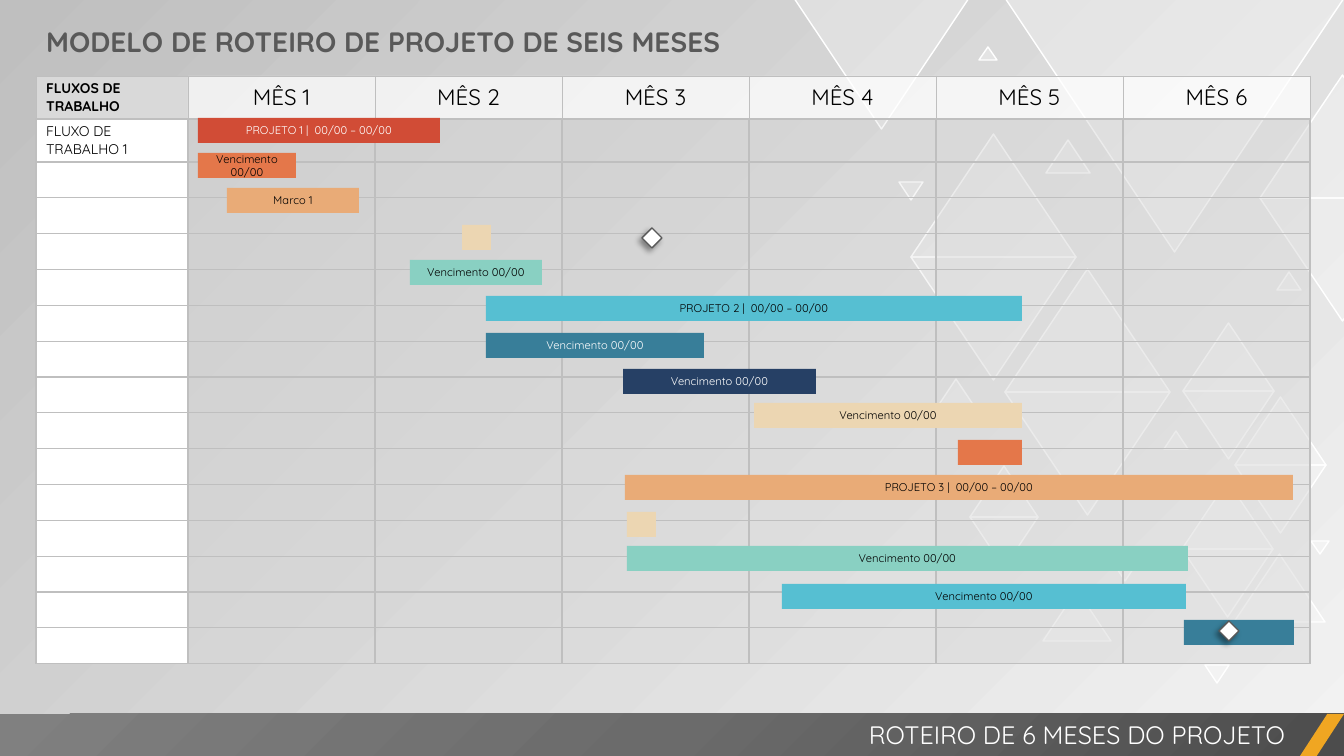
import dataclasses

import pptx
import pptx.dml.color
import pptx.enum.shapes
import pptx.enum.text
import pptx.oxml
import pptx.oxml.ns
import pptx.util

SHAPE = pptx.enum.shapes.MSO_SHAPE
ALIGN = pptx.enum.text.PP_ALIGN
ANCHOR = pptx.enum.text.MSO_ANCHOR
PAGE_WIDTH, PAGE_HEIGHT = 1344, 756
EMU_PER_PX = 12192000 / PAGE_WIDTH
NAMESPACE = 'xmlns:a="http://schemas.openxmlformats.org/drawingml/2006/main"'


@dataclasses.dataclass(frozen=True)
class Theme:
    font: str = "Quicksand"
    white: str = "FFFFFF"
    black: str = "000000"
    heading: str = "595959"
    grid: str = "BFBFBF"
    shade: str = "D9D9D9"
    pale: str = "F2F2F2"
    footer: tuple = ("4C4C4C", "6B6B6B", "808080")
    accent: str = "F0A622"
    red: str = "D14C36"
    orange: str = "E4774A"
    peach: str = "E9AB77"
    sand: str = "ECD6B2"
    mint: str = "89D0C2"
    sky: str = "56BFD2"
    teal: str = "387E99"
    navy: str = "264065"
    title_size: int = 20
    footer_size: int = 18
    month_size: int = 16
    stream_size: int = 10
    bar_size: int = 8


THEME = Theme()
DUE = "Vencimento 00/00"
DIAMONDS = [(911, 134, 165), (1005, 269, 165), (1182, 481, 91), (1183, 323, 91),
            (1235, 397, 91), (970, 466, 68), (1260, 75, 165)]
UPWARD = [(1234, 554, 91), (1043, 590, 68), (934, 379, 44), (1164, 431, 24),
          (1277, 272, 24), (979, 47, 18), (1046, 140, 44)]
DOWNWARD = [(1005, -2, 339), (1103, 548, 44), (1205, 665, 24), (899, 182, 24),
            (1311, 541, 18), (794, -2, 175)]
BARS = [
    (162, 42, 242, THEME.red, "PROJETO 1 |  00/00 – 00/00", THEME.white),
    (162, 77, 98, THEME.orange, DUE, THEME.black),
    (191, 112, 132, THEME.peach, "Marco 1", THEME.black),
    (426, 149, 29, THEME.sand, "", THEME.black),
    (374, 184, 132, THEME.mint, DUE, THEME.black),
    (450, 220, 536, THEME.sky, "PROJETO 2 |  00/00 – 00/00", THEME.black),
    (450, 257, 218, THEME.teal, DUE, THEME.white),
    (587, 293, 193, THEME.navy, DUE, THEME.white),
    (718, 327, 268, THEME.sand, DUE, THEME.black),
    (922, 364, 64, THEME.orange, "", THEME.black),
    (589, 399, 668, THEME.peach, "PROJETO 3 |  00/00 – 00/00", THEME.black),
    (591, 436, 29, THEME.sand, "", THEME.black),
    (591, 470, 561, THEME.mint, DUE, THEME.black),
    (746, 508, 404, THEME.sky, DUE, THEME.black),
    (1148, 544, 110, THEME.teal, "", THEME.black),
]
MILESTONES = [(606, 152), (1183, 545)]


def px(length):
    return round(length * EMU_PER_PX)


def rgb(colour):
    return pptx.dml.color.RGBColor.from_string(colour)


def xml(text):
    return pptx.oxml.parse_xml(text)


def paint(fill, element, colour, opacity=100):
    fill.solid()
    fill.fore_color.rgb = rgb(colour)
    if opacity < 100:
        swatch = element.find(pptx.oxml.ns.qn("a:solidFill"))[0]
        swatch.append(xml(f'<a:alpha {NAMESPACE} val="{opacity * 1000}"/>'))


def paint_gradient(fill, element, colours, direction, first_opacity=100):
    fill.solid()
    stops = ""
    for index, colour in enumerate(colours):
        position = index * 100000 // (len(colours) - 1)
        opacity = 100 if index else first_opacity
        stops += (f'<a:gs pos="{position}"><a:srgbClr val="{colour}">'
                  f'<a:alpha val="{opacity * 1000}"/></a:srgbClr></a:gs>')
    solid = element.find(pptx.oxml.ns.qn("a:solidFill"))
    element.replace(solid, xml(
        f'<a:gradFill {NAMESPACE} rotWithShape="1"><a:gsLst>{stops}</a:gsLst>'
        f'{direction}</a:gradFill>'))


def write(frame, text, size, colour, align=ALIGN.LEFT, bold=False):
    frame.text = text
    para = frame.paragraphs[0]
    para.alignment = align
    para.font.size = pptx.util.Pt(size)
    for span in para.runs:
        span.font.name = THEME.font
        span.font.size = pptx.util.Pt(size)
        span.font.bold = bold
        span.font.color.rgb = rgb(colour)


def add_figure(page, kind, box, colour, opacity=100, line=None):
    figure = page.shapes.add_shape(kind, *map(px, box))
    figure.shadow.inherit = False
    paint(figure.fill, figure.element.spPr, colour, opacity)
    if line:
        figure.line.color.rgb = rgb(line)
        figure.line.width = pptx.util.Pt(1)
    else:
        figure.line.fill.background()
    return figure


def draw_backdrop(page):
    fill = page.background.fill
    fill.solid()
    holder = page.element.find(".//" + pptx.oxml.ns.qn("p:bgPr"))
    paint_gradient(fill, holder, (THEME.pale, THEME.grid),
                   '<a:lin ang="13500000" scaled="0"/>', first_opacity=40)
    triangles = [(*spot, 0) for spot in DIAMONDS + UPWARD]
    triangles += [(*spot, 180) for spot in DOWNWARD]
    triangles += [(left, top + width * 3 // 4, width, 180) for left, top, width in DIAMONDS]
    for left, top, width, turn in triangles:
        triangle = add_figure(page, SHAPE.ISOSCELES_TRIANGLE,
                              (left, top, width, width * 3 // 4), THEME.white, 30, THEME.white)
        triangle.rotation = turn


def draw_title(page, box):
    title = page.shapes.title
    title.left, title.top, title.width, title.height = map(px, box)
    frame = title.text_frame
    frame.word_wrap = True
    frame.auto_size = pptx.enum.text.MSO_AUTO_SIZE.NONE
    frame.vertical_anchor = ANCHOR.TOP
    write(frame, "MODELO DE ROTEIRO DE PROJETO DE SEIS MESES",
          THEME.title_size, THEME.heading, bold=True)


def draw_footer(page, box):
    left, top, width, height = box
    band = add_figure(page, SHAPE.RECTANGLE, box, THEME.footer[0])
    paint_gradient(band.fill, band.element.spPr, THEME.footer,
                   '<a:path path="circle"><a:fillToRect l="100000" t="100000"/></a:path>')
    stripe = add_figure(page, SHAPE.PARALLELOGRAM,
                        (left + width - 44, top, 44, height), THEME.accent)
    stripe.adjustments[0] = 0.65
    label = page.shapes.add_textbox(*map(px, (left + width - 815, top, 766, 40)))
    label.text_frame.word_wrap = True
    write(label.text_frame, "ROTEIRO DE 6 MESES DO PROJETO",
          THEME.footer_size, THEME.white, ALIGN.RIGHT)


def draw_borders(cell, is_header):
    properties = cell._tc.get_or_add_tcPr()
    for index, side in enumerate("LRTB"):
        width = 6350 if is_header and side != "B" else 12700
        properties.insert(index, xml(
            f'<a:ln{side} {NAMESPACE} w="{width}"><a:solidFill>'
            f'<a:srgbClr val="{THEME.grid}"/></a:solidFill></a:ln{side}>'))


def draw_grid(page, box):
    table = page.shapes.add_table(16, 7, *map(px, box)).table
    table.first_row = table.horz_banding = False
    stream_width, tall_row = 152, 43
    for index, column in enumerate(table.columns):
        column.width = px((box[2] - stream_width) / 6 if index else stream_width)
    for index, row in enumerate(table.rows):
        row.height = px((box[3] - 2 * tall_row) / 14 if index > 1 else tall_row)
        for month, cell in enumerate(row.cells):
            text, size, colour, opacity = "", THEME.stream_size, THEME.white, 100
            if index == 0 and month:
                text, size, opacity = f"MÊS {month}", THEME.month_size, 75
            elif index == 0:
                text, colour = "FLUXOS DE TRABALHO", THEME.shade
            elif month:
                colour, opacity = THEME.shade, 25 if month in (3, 4) else 50
            elif index == 1:
                text = "FLUXO DE TRABALHO 1"
            cell.margin_top = cell.margin_bottom = 0
            cell.vertical_anchor = ANCHOR.MIDDLE
            write(cell.text_frame, text, size, THEME.black,
                  ALIGN.CENTER if month else ALIGN.LEFT, bold=index == month == 0)
            paint(cell.fill, cell._tc.get_or_add_tcPr(), colour, opacity)
            draw_borders(cell, index == 0)


def draw_schedule(page, box):
    for left, top, width, colour, text, ink in BARS:
        bar = add_figure(page, SHAPE.RECTANGLE, (box[0] + left, box[1] + top, width, 25), colour)
        if text:
            bar.text_frame.word_wrap = True
            bar.text_frame.vertical_anchor = ANCHOR.MIDDLE
            write(bar.text_frame, text, THEME.bar_size, ink, ALIGN.CENTER)
    for left, top in MILESTONES:
        marker = add_figure(page, SHAPE.DIAMOND, (box[0] + left, box[1] + top, 20, 20),
                            THEME.white, line=THEME.heading)
        marker.element.spPr.find(pptx.oxml.ns.qn("a:effectLst")).append(xml(
            f'<a:outerShdw {NAMESPACE} blurRad="50800" dist="38100" dir="8100000">'
            f'<a:srgbClr val="{THEME.black}"><a:alpha val="40000"/></a:srgbClr></a:outerShdw>'))


def main():
    deck = pptx.Presentation()
    deck.slide_width, deck.slide_height = px(PAGE_WIDTH), px(PAGE_HEIGHT)
    page = deck.slides.add_slide(deck.slide_layouts[5])
    roadmap = (36, 76, 1274, 588)
    draw_backdrop(page)
    draw_title(page, (36, 19, 805, 44))
    draw_footer(page, (0, 714, PAGE_WIDTH, 42))
    draw_grid(page, roadmap)
    draw_schedule(page, roadmap)
    deck.save("out.pptx")


if __name__ == "__main__":
    main()
